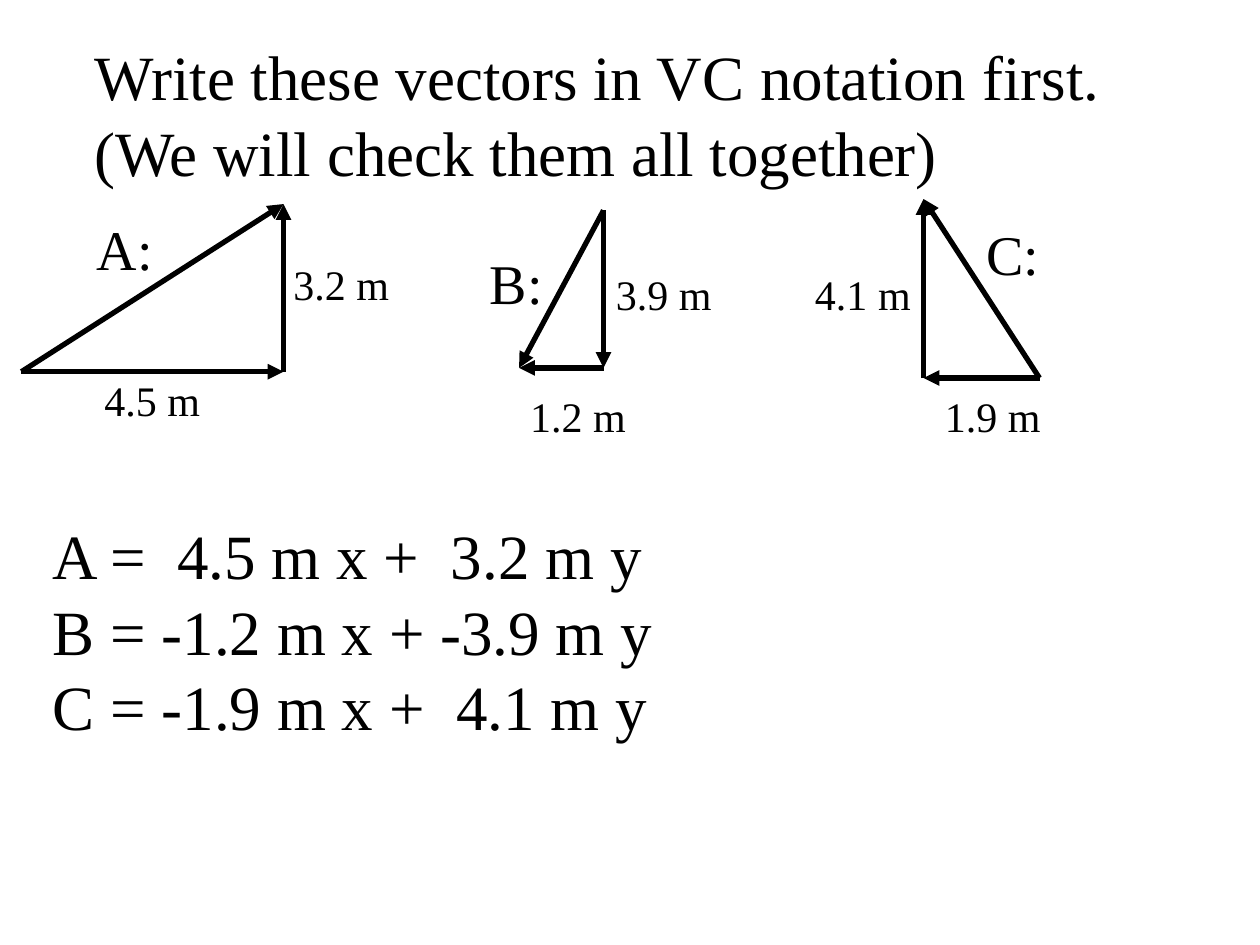
"""Build a slide with three vector triangles and their component notation."""
from lxml import etree
from pptx import Presentation
from pptx.dml.color import RGBColor
from pptx.enum.shapes import MSO_CONNECTOR as CONN
from pptx.enum.text import MSO_ANCHOR as ANCHOR, MSO_AUTO_SIZE as FIT, PP_ALIGN as ALIGN
from pptx.oxml.ns import qn
from pptx.util import Inches, Pt


def rgb(value):
    return RGBColor.from_string(value)


def write(sp, box, text, size, wrap=False):
    sp.left, sp.top, sp.width, sp.height = [Inches(v) for v in box]
    tf = sp.text_frame
    tf.text = text
    tf.word_wrap = wrap
    tf.auto_size = FIT.SHAPE_TO_FIT_TEXT
    tf.vertical_anchor = ANCHOR.TOP
    for p in tf.paragraphs:
        p.alignment = ALIGN.LEFT
        for r in p.runs:
            r.font.name = "Times New Roman"
            r.font.size = Pt(size)
            r.font.color.rgb = rgb("000000")


prs = Presentation()
prs.slide_width, prs.slide_height = Inches(10), Inches(7.5)
s = prs.slides.add_slide(prs.slide_layouts[5])

title = "Write these vectors in VC notation first.\n(We will check them all together)"
write(s.shapes.title, (0.65, 0.25, 8.77, 1.3), title, 36, wrap=True)

triangles = [
    ((0.17, 2.95), (2.25, 2.95), (2.25, 1.62)),
    ((4.79, 1.67), (4.79, 2.92), (4.12, 2.92)),
    ((8.25, 3), (7.33, 3), (7.33, 1.58)),
]
for start, corner, end in triangles:
    for a, b in ((start, corner), (corner, end), (start, end)):
        line = s.shapes.add_connector(CONN.STRAIGHT, *[Inches(v) for v in a + b])
        line.line.color.rgb = rgb("000000")
        line.line.width = Pt(3)
        etree.SubElement(line.line._get_or_add_ln(), qn("a:tailEnd"), type="triangle")
        etree.SubElement(line._element.spPr, qn("a:effectLst"))

names = [("A:", 0.67, 1.65, 0.65), ("B:", 3.79, 1.92, 0.62), ("C:", 7.73, 1.69, 0.62)]
for text, x, y, w in names:
    write(s.shapes.add_textbox(0, 0, 0, 0), (x, y, w, 0.63), text, 32)

lengths = [
    ("4.5 m", 0.73, 2.92), ("3.2 m", 2.23, 2),
    ("1.2 m", 4.11, 3.05), ("3.9 m", 4.79, 2.08),
    ("1.9 m", 7.4, 3.05), ("4.1 m", 6.37, 2.08),
]
for text, x, y in lengths:
    write(s.shapes.add_textbox(0, 0, 0, 0), (x, y, 0.96, 0.5), text, 24)

answers = "A =  4.5 m x +  3.2 m y\nB = -1.2 m x + -3.9 m y\nC = -1.9 m x +  4.1 m y"
write(s.shapes.add_textbox(0, 0, 0, 0), (0.32, 4.05, 4.96, 1.9), answers, 36)

prs.save("out.pptx")
